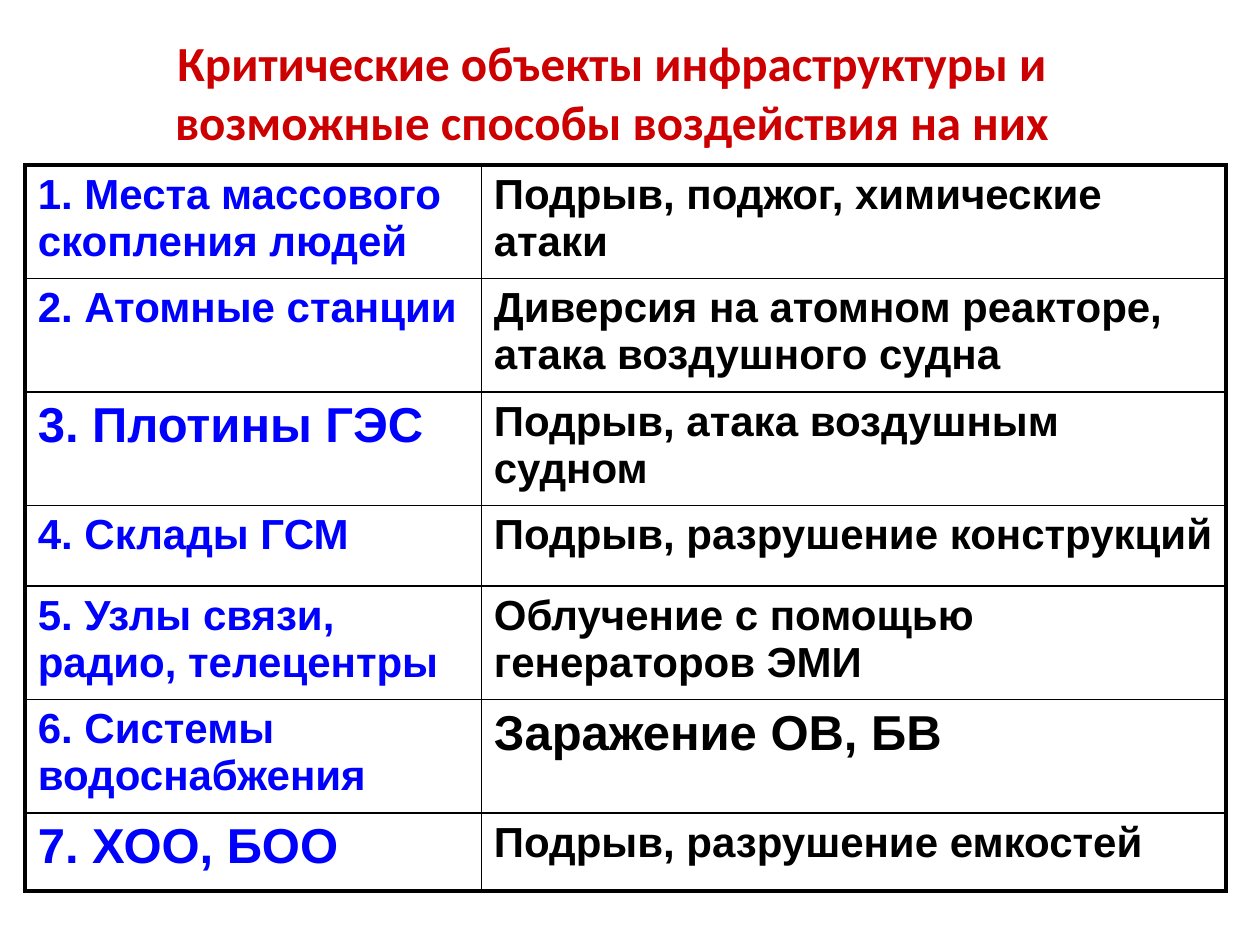
import pptx
import pptx.dml.color
import pptx.enum.text
import pptx.oxml
import pptx.oxml.ns
import pptx.util
from pptx.util import Inches

COLORS = {"title": "CC0000", "object": "0000FF", "threat": "000000",
          "border": "000000", "cell": "FFFFFF"}
ROWS = [
    (0.9, ("1. Места массового скопления людей", 24), ("Подрыв, поджог, химические атаки", 24)),
    (0.9, ("2. Атомные станции", 24), ("Диверсия на атомном реакторе, атака воздушного судна", 24)),
    (0.9, ("3. Плотины ГЭС", 28), ("Подрыв, атака воздушным судном", 24)),
    (0.64, ("4. Склады ГСМ", 24), ("Подрыв, разрушение конструкций", 24)),
    (0.9, ("5. Узлы связи, радио, телецентры", 24), ("Облучение с помощью генераторов ЭМИ", 24)),
    (0.9, ("6. Системы водоснабжения", 24), ("Заражение ОВ, БВ", 28)),
    (0.62, ("7. ХОО, БОО", 28), ("Подрыв, разрушение емкостей", 24)),
]
COLUMN_WIDTHS = (3.62, 5.91)
OUTER, INNER = 2.25, 1


def rgb(name):
    return pptx.dml.color.RGBColor.from_string(COLORS[name])


def write_text(tf, text, *, size, color, font, align="LEFT", space_before=0):
    tf.word_wrap = True
    p = tf.paragraphs[0]
    p.alignment = getattr(pptx.enum.text.PP_ALIGN, align)
    if space_before:
        ns = pptx.oxml.ns.nsdecls("a")
        p._p.get_or_add_pPr().append(pptx.oxml.parse_xml(
            f'<a:spcBef {ns}><a:spcPct val="{space_before * 1000}"/></a:spcBef>'))
    r = p.add_run()
    r.text = text
    r.font.name = font
    r.font.size = pptx.util.Pt(size)
    r.font.bold = True
    r.font.color.rgb = rgb(color)


def set_borders(cell, widths):
    ns = pptx.oxml.ns.nsdecls("a")
    tc_pr = cell._tc.get_or_add_tcPr()
    for i, (side, width) in enumerate(widths.items()):
        tc_pr.insert(i, pptx.oxml.parse_xml(
            f'<a:ln{side} {ns} w="{pptx.util.Pt(width)}"><a:solidFill>'
            f'<a:srgbClr val="{COLORS["border"]}"/></a:solidFill></a:ln{side}>'))


def add_title(s, text):
    sp = s.shapes.add_textbox(Inches(0.59), Inches(0.21), Inches(8.53), Inches(1.03))
    write_text(sp.text_frame, text, size=28, color="title", font="Calibri", align="CENTER")


def add_threat_table(s):
    last = len(ROWS) - 1
    frame = s.shapes.add_table(len(ROWS), 2, Inches(0.2), Inches(1.31),
                               Inches(sum(COLUMN_WIDTHS)), Inches(sum(row[0] for row in ROWS)))
    table = frame.table
    table.first_row = table.horz_banding = False
    for column, width in zip(table.columns, COLUMN_WIDTHS):
        column.width = Inches(width)
    for i, (height, *entries) in enumerate(ROWS):
        table.rows[i].height = Inches(height)
        for j, (text, size) in enumerate(entries):
            cell = table.cell(i, j)
            cell.fill.solid()
            cell.fill.fore_color.rgb = rgb("cell")
            write_text(cell.text_frame, text, size=size, font="Arial",
                       color=("object", "threat")[j], space_before=20)
            set_borders(cell, {"L": OUTER if j == 0 else INNER,
                               "R": OUTER if j == 1 else INNER,
                               "T": OUTER if i == 0 else INNER,
                               "B": OUTER if i == last else INNER})


def main():
    """Build the slide on critical infrastructure and its threats."""
    prs = pptx.Presentation()
    prs.slide_width, prs.slide_height = Inches(10), Inches(7.5)
    s = prs.slides.add_slide(prs.slide_layouts[6])
    add_title(s, "Критические объекты инфраструктуры и возможные способы воздействия на них")
    add_threat_table(s)
    prs.save("out.pptx")


if __name__ == "__main__":
    main()
